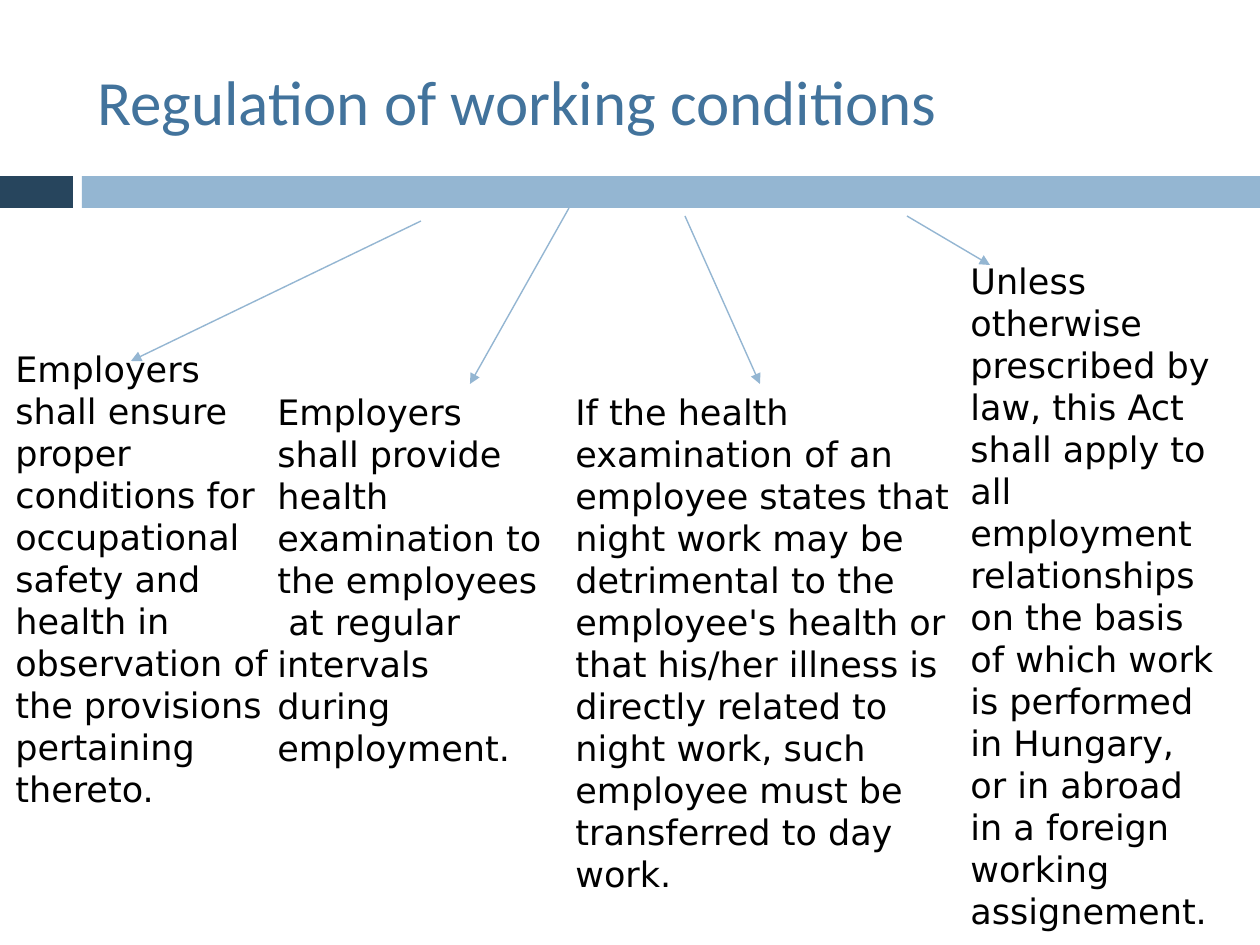
from typing import NamedTuple

from lxml import etree
from pptx import Presentation
from pptx.dml.color import RGBColor
from pptx.enum.shapes import MSO_CONNECTOR, MSO_SHAPE
from pptx.enum.text import MSO_ANCHOR, MSO_AUTO_SIZE
from pptx.oxml.ns import qn
from pptx.util import Emu, Pt

RECTANGLE = MSO_SHAPE.RECTANGLE
STRAIGHT = MSO_CONNECTOR.STRAIGHT
MIDDLE, TOP = MSO_ANCHOR.MIDDLE, MSO_ANCHOR.TOP
GROW, FIXED = MSO_AUTO_SIZE.SHAPE_TO_FIT_TEXT, MSO_AUTO_SIZE.NONE

PX_PER_INCH = 126
LIGHT_BLUE = "94B6D2"
DARK_BLUE = "27455D"
TITLE_STYLE = {"name": "Calibri", "size": Pt(36)}
BODY_STYLE = {"name": "DejaVu Sans", "size": Pt(20)}


class Area(NamedTuple):
    left: int
    top: int
    width: int
    height: int


class Band(NamedTuple):
    area: Area
    color: str


class Arrow(NamedTuple):
    x1: int
    y1: int
    x2: int
    y2: int


class Rule(NamedTuple):
    area: Area
    text: str


BANDS = [
    Band(Area(0, 176, 73, 32), DARK_BLUE),
    Band(Area(82, 176, 1178, 32), LIGHT_BLUE),
]
ARROWS = [
    Arrow(421, 221, 131, 361),
    Arrow(569, 208, 470, 384),
    Arrow(685, 216, 760, 384),
    Arrow(907, 216, 990, 265),
]
RULES = [
    Rule(Area(3, 341, 301, 479),
         "Employers shall ensure proper conditions for occupational safety and "
         "health in observation of the provisions pertaining thereto."),
    Rule(Area(265, 384, 292, 394),
         "Employers shall provide health examination to the employees "
         " at regular intervals during employment."),
    Rule(Area(563, 384, 411, 522),
         "If the health examination of an employee states that night work may be "
         "detrimental to the employee's health or that his/her illness is directly "
         "related to night work, such employee must be transferred to day work."),
    Rule(Area(958, 253, 274, 692),
         "Unless otherwise prescribed by law, this Act shall apply to all employment "
         "relationships on the basis of which work is performed in Hungary, or in "
         "abroad in a foreign working assignement."),
]


def px(length: int) -> Emu:
    return Emu(round(length * 914400 / PX_PER_INCH))


def rgb(color: str) -> RGBColor:
    return RGBColor.from_string(color)


def draw_band(page, band: Band) -> None:
    shape = page.shapes.add_shape(RECTANGLE, *map(px, band.area))
    shape.shadow.inherit = False
    shape.fill.solid()
    shape.fill.fore_color.rgb = rgb(band.color)
    shape.line.fill.background()


def draw_arrow(page, arrow: Arrow) -> None:
    connector = page.shapes.add_connector(STRAIGHT, *map(px, arrow))
    connector.line.color.rgb = rgb(LIGHT_BLUE)
    connector.line.width = Pt(0.79)
    etree.SubElement(connector.line._get_or_add_ln(), qn("a:tailEnd"), type="triangle")
    etree.SubElement(connector._element.spPr, qn("a:effectLst"))


def draw_text(page, area: Area, text: str, style: dict, color: str,
              anchor=TOP, auto_size=GROW) -> None:
    frame = page.shapes.add_textbox(*map(px, area)).text_frame
    for name, value in {"word_wrap": True, "auto_size": auto_size,
                        "vertical_anchor": anchor}.items():
        setattr(frame, name, value)
    span = frame.paragraphs[0].add_run()
    span.text = text
    for name, value in style.items():
        setattr(span.font, name, value)
    span.font.color.rgb = rgb(color)


def main() -> None:
    deck = Presentation()
    deck.slide_width, deck.slide_height = px(1260), px(945)
    page = deck.slides.add_slide(deck.slide_layouts[6])
    for band in BANDS:
        draw_band(page, band)
    draw_text(page, Area(85, 32, 1124, 136), "Regulation of working conditions",
              TITLE_STYLE, "42739C", MIDDLE, FIXED)
    for arrow in ARROWS:
        draw_arrow(page, arrow)
    for rule in RULES:
        draw_text(page, rule.area, rule.text, BODY_STYLE, "000000")
    deck.save("out.pptx")


if __name__ == "__main__":
    main()
